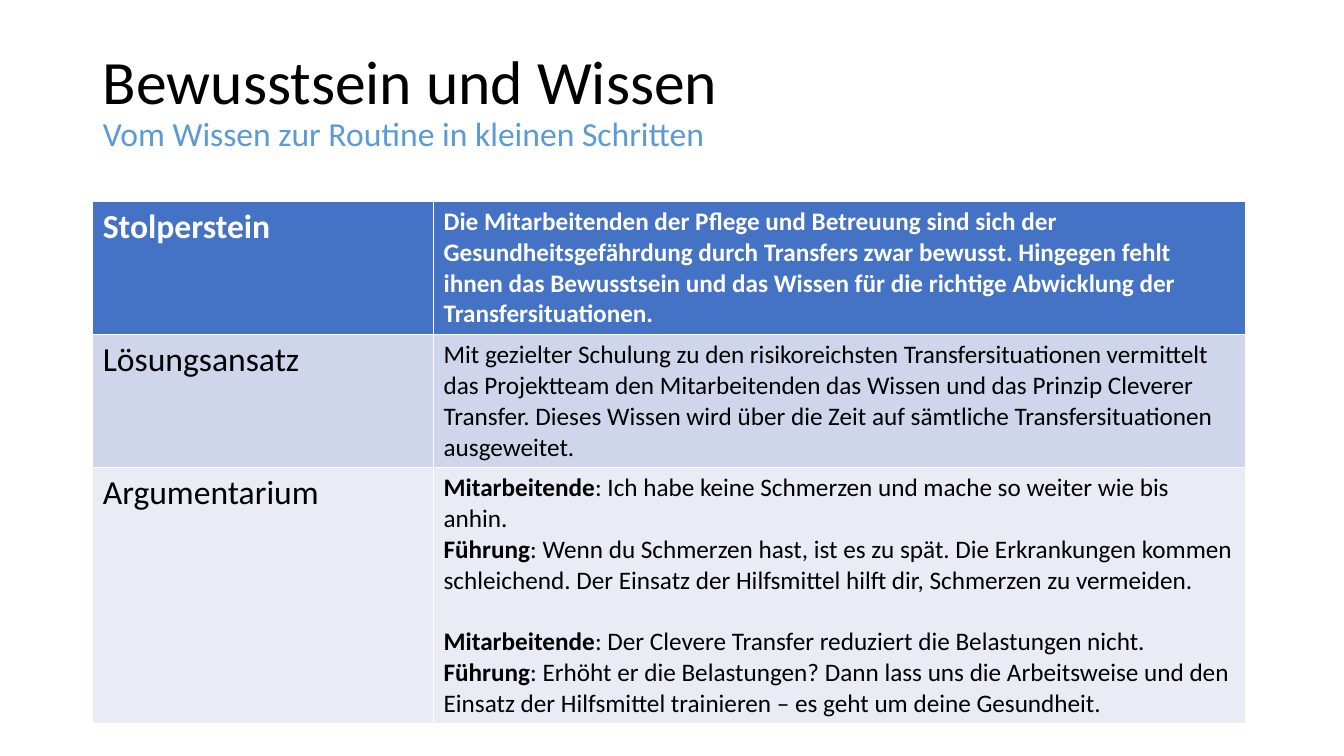
from pptx import Presentation
from pptx.dml.color import RGBColor as RGB
from pptx.enum.text import MSO_ANCHOR as ANCHOR, MSO_AUTO_SIZE as FIT, PP_ALIGN as ALIGN
from pptx.util import Inches, Pt

COLORS = {
    "text": "000000",
    "white": "FFFFFF",
    "subtitle": "5B9BD5",
    "header": "4472C4",
    "band_dark": "CFD5EA",
    "band_light": "E9EBF5",
}

# Each row: label, paragraphs as (bold lead, text, space before), fill, height
ROWS = [
    ("Stolperstein",
     [("", "Die Mitarbeitenden der Pflege und Betreuung sind sich der "
           "Gesundheitsgefährdung durch Transfers zwar bewusst. Hingegen fehlt "
           "ihnen das Bewusstsein und das Wissen für die richtige Abwicklung "
           "der Transfersituationen.", 0)],
     "header", 1.31),
    ("Lösungsansatz",
     [("", "Mit gezielter Schulung zu den risikoreichsten Transfersituationen "
           "vermittelt das Projektteam den Mitarbeitenden das Wissen und das "
           "Prinzip Cleverer Transfer. Dieses Wissen wird über die Zeit auf "
           "sämtliche Transfersituationen ausgeweitet.", 0)],
     "band_dark", 1.32),
    ("Argumentarium",
     [("Mitarbeitende", ": Ich habe keine Schmerzen und mache so weiter wie "
                        "bis anhin.", 0),
      ("Führung", ": Wenn du Schmerzen hast, ist es zu spät. Die Erkrankungen "
                  "kommen schleichend. Der Einsatz der Hilfsmittel hilft dir, "
                  "Schmerzen zu vermeiden.", 0),
      ("Mitarbeitende", ": Der Clevere Transfer reduziert die Belastungen "
                        "nicht.", 22),
      ("Führung", ": Erhöht er die Belastungen? Dann lass uns die Arbeitsweise "
                  "und den Einsatz der Hilfsmittel trainieren – es geht um "
                  "deine Gesundheit.", 0)],
     "band_light", 2.54),
]


class SlideBuilder:
    font = "Calibri"

    def __init__(self, prs):
        self.slide = prs.slides.add_slide(prs.slide_layouts[5])

    def style(self, r, size, color, bold=False):
        r.font.name = self.font
        r.font.size = Pt(size)
        r.font.bold = bold
        r.font.color.rgb = RGB.from_string(COLORS[color])

    def title(self, heading, subtitle, box):
        sp = self.slide.shapes.title
        sp.left, sp.top, sp.width, sp.height = map(Inches, box)
        tf = sp.text_frame
        tf.text = f"{heading}\v{subtitle}"
        tf.word_wrap = True
        tf.auto_size = FIT.NONE
        tf.vertical_anchor = ANCHOR.MIDDLE
        p = tf.paragraphs[0]
        p.alignment = ALIGN.LEFT
        p.line_spacing = 0.9
        for r, size, color in zip(p.runs, (44, 24), ("text", "subtitle")):
            self.style(r, size, color)

    def cell(self, cell, paragraphs, size, fill):
        header = fill == "header"
        color = "white" if header else "text"
        cell.fill.solid()
        cell.fill.fore_color.rgb = RGB.from_string(COLORS[fill])
        tf = cell.text_frame
        tf.text = "\n".join(lead for lead, _, _ in paragraphs)
        for p, (_, text, gap) in zip(tf.paragraphs, paragraphs):
            p.space_before = Pt(gap)
            for r in p.runs:
                self.style(r, size, color, True)
            r = p.add_run()
            r.text = text
            self.style(r, size, color, header)

    def table(self, rows, left, top, widths):
        height = sum(row[-1] for row in rows)
        frame = self.slide.shapes.add_table(
            len(rows), len(widths), Inches(left), Inches(top),
            Inches(sum(widths)), Inches(height))
        table = frame.table
        for column, width in zip(table.columns, widths):
            column.width = Inches(width)
        for row, (label, paragraphs, fill, height) in zip(table.rows, rows):
            row.height = Inches(height)
            label_cell, text_cell = row.cells
            self.cell(label_cell, [("", label, 0)], 24, fill)
            self.cell(text_cell, paragraphs, 18, fill)


def main():
    prs = Presentation()
    prs.slide_width, prs.slide_height = Inches(13.33), Inches(7.5)
    s = SlideBuilder(prs)

    # Title with subtitle
    s.title("Bewusstsein und Wissen",
            "Vom Wissen zur Routine in kleinen Schritten",
            (0.92, 0.29, 11.5, 1.45))

    # Table of obstacle, solution and arguments
    s.table(ROWS, 0.92, 2, (3.38, 8.05))

    prs.save("out.pptx")


if __name__ == "__main__":
    main()
